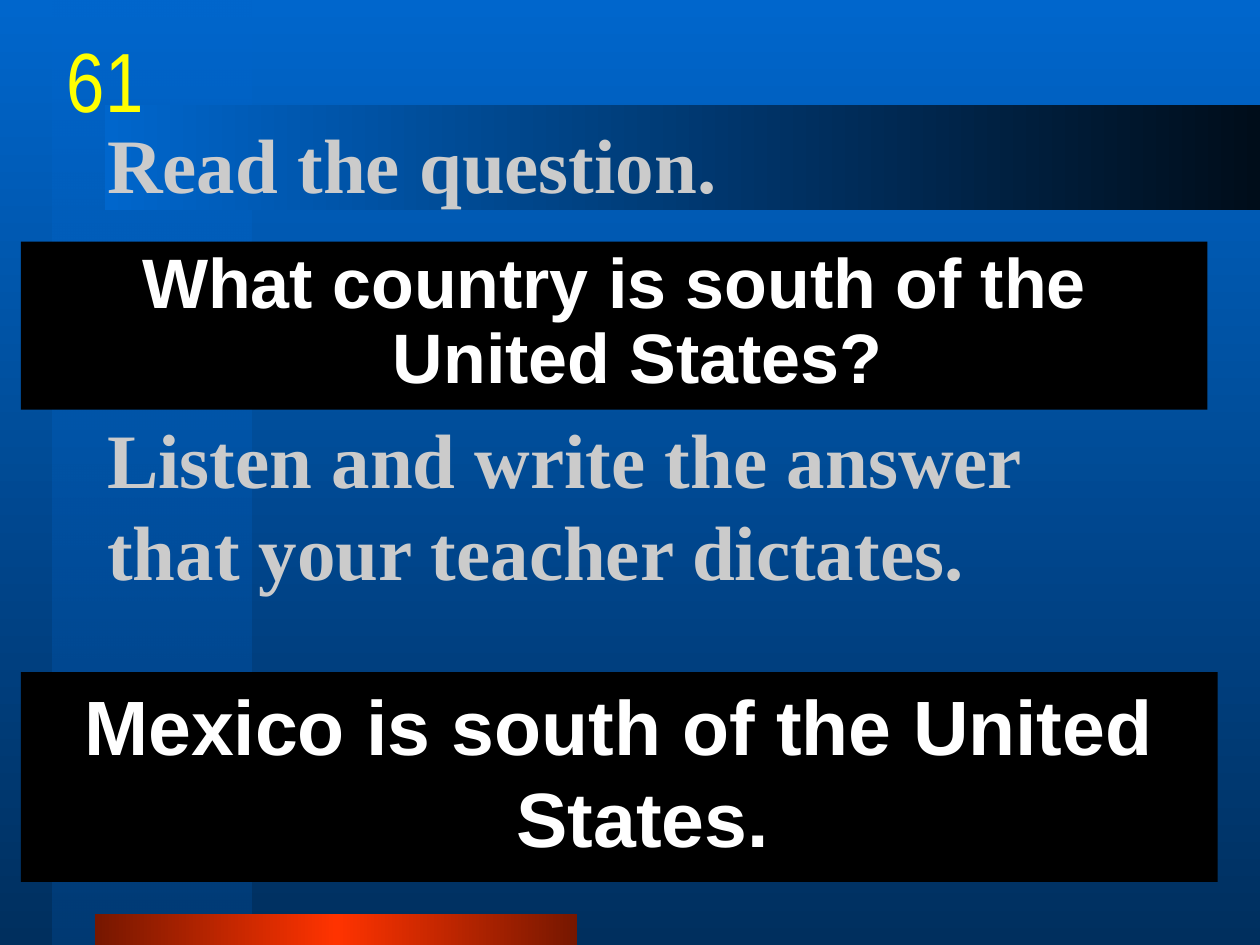
"""Build the dictation slide about the country south of the United States."""
import copy
from dataclasses import dataclass

import lxml.etree
import pptx
import pptx.dml.color
import pptx.enum.shapes
import pptx.enum.text
import pptx.oxml.ns
import pptx.util
from pptx.util import Cm


@dataclass(frozen=True)
class Theme:
    sky: str = "0066CC"
    deep: str = "002F5E"
    column: str = "0053A6"
    night: str = "000D1A"
    ember: str = "761700"
    flame: str = "FF3300"
    panel: str = "000000"
    instruction: str = "CBCBCB"
    answer: str = "FFFFFF"
    number: str = "FFFF00"
    large: int = 44
    medium: int = 40
    number_size: int = 48


def blend(fill, colours, angle):
    """Fill with evenly spaced colour stops."""
    fill.gradient()
    fill.gradient_angle = angle
    first = fill.gradient_stops[0]._gs
    for extra in colours[2:]:
        first.addnext(copy.deepcopy(first))
    for index, (stop, colour) in enumerate(zip(fill.gradient_stops, colours)):
        stop.position = index / (len(colours) - 1)
        stop.color.rgb = pptx.dml.color.RGBColor.from_string(colour)


def write(box, text, font, size, colour, bold, align):
    """Put one styled paragraph in a box and return it."""
    box.text_frame.word_wrap = True
    para = box.text_frame.paragraphs[0]
    para.text = text
    para.alignment = align
    para.font.name = font
    para.font.size = pptx.util.Pt(size)
    para.font.bold = bold
    para.font.color.rgb = pptx.dml.color.RGBColor.from_string(colour)
    return para


theme = Theme()
align = pptx.enum.text.PP_ALIGN
anchor = pptx.enum.text.MSO_ANCHOR
rectangle = pptx.enum.shapes.MSO_SHAPE.RECTANGLE

deck = pptx.Presentation()
deck.slide_width, deck.slide_height = Cm(25.4), Cm(19.05)
page = deck.slides.add_slide(deck.slide_layouts[6])
blend(page.background.fill, [theme.sky, theme.deep], 270)

bands = [
    (1.06, 0, 4.02, 19.05, [theme.sky, theme.column], 270),
    (1.91, 18.42, 9.73, 0.63, [theme.ember, theme.flame, theme.ember], 0),
    (2.12, 2.12, 23.28, 2.12, [theme.sky, theme.night], 0),
]
for left, top, width, height, colours, angle in bands:
    band = page.shapes.add_shape(rectangle, Cm(left), Cm(top), Cm(width), Cm(height))
    band.shadow.inherit = False
    band.line.fill.background()
    blend(band.fill, colours, angle)
    if left == 1.06:
        for stop, opacity in zip(band.fill.gradient_stops, (50000, 30000)):
            lxml.etree.SubElement(stop._gs[0], pptx.oxml.ns.qn("a:alpha"), val=str(opacity))

instructions = [
    ("Read the question.", 1.7, 3.18),
    ("Listen and write the answer that your teacher dictates.", 8.04, 4.23),
]
for text, top, height in instructions:
    box = page.shapes.add_textbox(Cm(1.91), Cm(top), Cm(21.59), Cm(height))
    box.text_frame.vertical_anchor = anchor.MIDDLE
    write(box, text, "Times New Roman", theme.large, theme.instruction, True, align.LEFT)

panels = [
    ("What country is south of the United States?", 4.87, 23.92, 3.39, theme.medium, 0.9),
    ("Mexico is south of the United States.", 13.55, 24.13, 4.23, theme.large, 1.0),
]
for text, top, width, height, size, spacing in panels:
    panel = page.shapes.add_shape(rectangle, Cm(0.42), Cm(top), Cm(width), Cm(height))
    panel.shadow.inherit = False
    panel.line.fill.background()
    panel.fill.solid()
    panel.fill.fore_color.rgb = pptx.dml.color.RGBColor.from_string(theme.panel)
    panel.text_frame.vertical_anchor = anchor.TOP
    para = write(panel, text, "Arial", size, theme.answer, True, align.CENTER)
    para.line_spacing = spacing
    para.space_before = pptx.util.Pt(size * 0.2)
    indent = para._p.get_or_add_pPr()
    indent.set("marL", str(Cm(0.95)))
    indent.set("indent", str(-Cm(0.95)))

number = page.shapes.add_textbox(Cm(1.27), Cm(0.45), Cm(1.7), Cm(2.12))
number.text_frame.margin_left = number.text_frame.margin_right = 0
write(number, "61", "Arial Narrow", theme.number_size, theme.number, False, align.CENTER)

deck.save("out.pptx")
